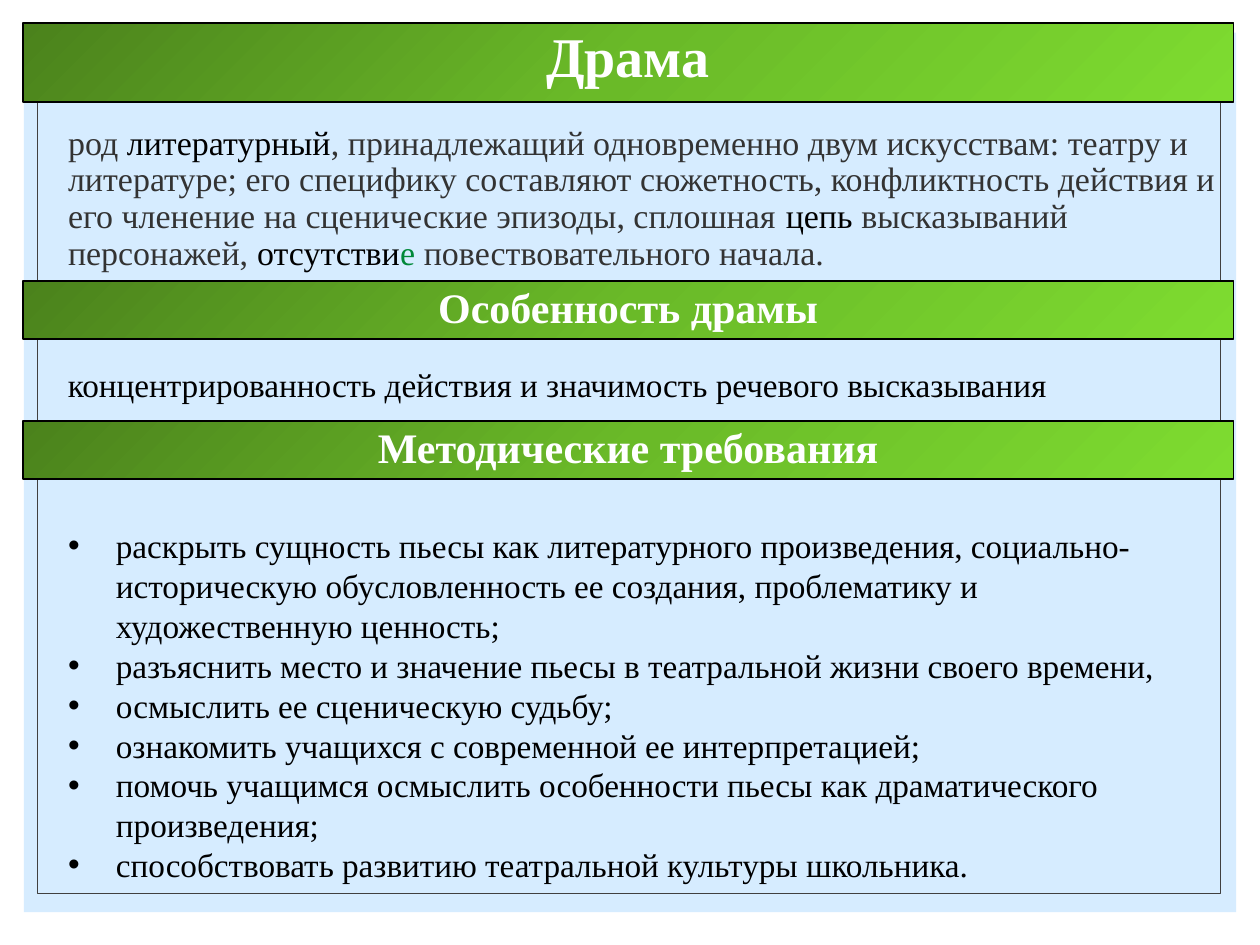
import pptx
import pptx.dml.color
import pptx.enum.shapes
import pptx.enum.text
import pptx.oxml.ns
import pptx.util
import lxml.etree

Inches = pptx.util.Inches
qn = pptx.oxml.ns.qn

FONT = "Times New Roman"
GREENS = [(0, "4B821C"), (50, "6ABA28"), (100, "7EDC30")]
BAND_LEFT, BAND_WIDTH = 0.18, 9.61
TEXT_LEFT = 0.44
GREY, BLACK, GREEN, WHITE = "333333", "000000", "008838", "FFFFFF"

DEFINITION = [
    ("род ", GREY),
    ("литературный", BLACK),
    (", принадлежащий одновременно двум искусствам: театру и литературе; "
     "его специфику составляют сюжетность, конфликтность действия и его "
     "членение на сценические эпизоды, сплошная ", GREY),
    ("цепь ", BLACK),
    ("высказываний персонажей, ", GREY),
    ("отсутстви", BLACK),
    ("е ", GREEN),
    ("повествовательного начала.", GREY),
]
FEATURE = "концентрированность действия и значимость речевого высказывания"
REQUIREMENTS = [
    "раскрыть сущность пьесы как литературного произведения, "
    "социально-историческую обусловленность ее создания, проблематику и "
    "художественную ценность;",
    "разъяснить место и значение пьесы в театральной жизни своего времени,",
    "осмыслить ее сценическую судьбу;",
    "ознакомить учащихся с современной ее интерпретацией;",
    "помочь учащимся осмыслить особенности пьесы как драматического произведения;",
    "способствовать развитию театральной культуры школьника.",
]


def color(value):
    return pptx.dml.color.RGBColor.from_string(value)


def place(box, left, top, width, height):
    box.left, box.top = Inches(left), Inches(top)
    box.width, box.height = Inches(width), Inches(height)


def set_frame(box):
    frame = box.text_frame
    frame.word_wrap = True
    frame.auto_size = pptx.enum.text.MSO_AUTO_SIZE.NONE
    frame.vertical_anchor = pptx.enum.text.MSO_ANCHOR.TOP
    return frame


def add_span(para, text, size, value, bold=False):
    span = para.add_run()
    span.text = text
    span.font.name = FONT
    span.font.size = pptx.util.Pt(size)
    span.font.bold = bold
    span.font.color.rgb = color(value)


def set_bullet(para, character=None, indent=0):
    para.space_before = pptx.util.Pt(0)
    properties = para._p.get_or_add_pPr()
    properties.set("marL", str(Inches(indent)))
    properties.set("indent", str(-Inches(indent)))
    if character:
        font = lxml.etree.SubElement(properties, qn("a:buFont"))
        font.set("typeface", "Arial")
        bullet = lxml.etree.SubElement(properties, qn("a:buChar"))
        bullet.set("char", character)
    else:
        lxml.etree.SubElement(properties, qn("a:buNone"))


def add_panel(page, left, top, width, height, depth, fill=None, line=None):
    panel = page.shapes.add_shape(
        pptx.enum.shapes.MSO_SHAPE.RECTANGLE,
        Inches(left), Inches(top), Inches(width), Inches(height))
    panel.shadow.inherit = False
    if fill:
        panel.fill.solid()
        panel.fill.fore_color.rgb = color(fill)
    else:
        panel.fill.background()
    if line:
        panel.line.color.rgb = color(line)
        panel.line.width = pptx.util.Pt(0.5)
    else:
        panel.line.fill.background()
    panel._element.getparent().insert(depth, panel._element)


def fill_gradient(box):
    box.fill.gradient()
    box.fill.gradient_angle = 315
    stops = box._element.spPr.find(qn("a:gradFill")).find(qn("a:gsLst"))
    for stop in list(stops):
        stops.remove(stop)
    for percent, value in GREENS:
        stop = lxml.etree.SubElement(stops, qn("a:gs"))
        stop.set("pos", str(percent * 1000))
        lxml.etree.SubElement(stop, qn("a:srgbClr")).set("val", value)


def format_band(box, text, top, height, size):
    place(box, BAND_LEFT, top, BAND_WIDTH, height)
    fill_gradient(box)
    box.line.color.rgb = color(BLACK)
    box.line.width = pptx.util.Pt(1)
    para = set_frame(box).paragraphs[0]
    para.alignment = pptx.enum.text.PP_ALIGN.CENTER
    para.line_spacing = 0.9
    add_span(para, text, size, WHITE, bold=True)


def add_band(page, text, top):
    band = page.shapes.add_shape(
        pptx.enum.shapes.MSO_SHAPE.RECTANGLE, 0, 0, 0, 0)
    band.shadow.inherit = False
    format_band(band, text, top, 0.46, 24)


def fill_definition(box, left, top, width, height):
    place(box, left, top, width, height)
    para = set_frame(box).paragraphs[0]
    set_bullet(para)
    para.line_spacing = 0.9
    for text, value in DEFINITION:
        add_span(para, text, 19.4, value)


def add_feature(page, left, top, width, height):
    box = page.shapes.add_textbox(0, 0, 0, 0)
    place(box, left, top, width, height)
    add_span(set_frame(box).paragraphs[0], FEATURE, 19, BLACK)


def fill_requirements(box, left, top, width, height):
    place(box, left, top, width, height)
    frame = set_frame(box)
    for index, text in enumerate(REQUIREMENTS):
        para = frame.add_paragraph() if index else frame.paragraphs[0]
        set_bullet(para, "•", 0.38)
        para.line_spacing = 1.0
        add_span(para, text, 19, BLACK)


def build_page(deck):
    page = deck.slides.add_slide(deck.slide_layouts[3])
    title, definition, requirements = page.placeholders
    add_panel(page, 0.19, 0.26, 9.62, 6.98, 2, fill="D6ECFF")
    add_panel(page, 0.3, 0.41, 9.39, 6.68, 3, line="404040")
    format_band(title, "Драма", 0.18, 0.63, 32)
    fill_definition(definition, TEXT_LEFT, 0.95, 9.47, 1.27)
    add_band(page, "Особенность драмы", 2.23)
    add_feature(page, TEXT_LEFT, 2.84, 9.08, 0.42)
    add_band(page, "Методические требования", 3.34)
    fill_requirements(requirements, TEXT_LEFT, 4.12, 9.22, 2.98)


def main():
    deck = pptx.Presentation()
    deck.slide_width, deck.slide_height = Inches(10), Inches(7.5)
    build_page(deck)
    deck.save("out.pptx")


if __name__ == "__main__":
    main()
